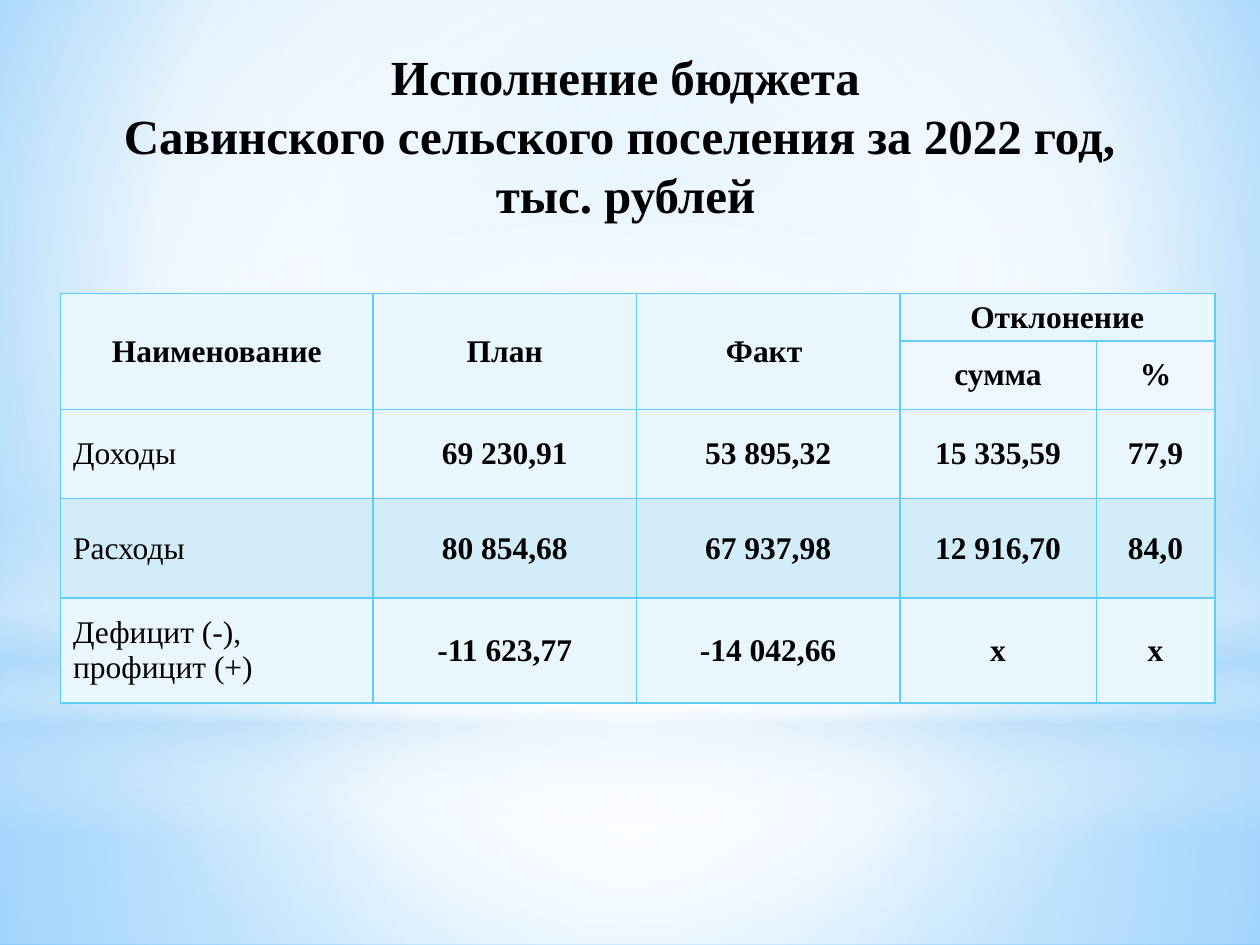
"""Build the budget execution slide with its soft blue backdrop and summary table."""
from lxml.etree import SubElement
from pptx import Presentation
from pptx.dml.color import RGBColor
from pptx.enum.shapes import MSO_SHAPE
from pptx.enum.text import MSO_ANCHOR, MSO_AUTO_SIZE, PP_ALIGN
from pptx.oxml.ns import qn
from pptx.util import Pt

COLORS = {
    "text": "000000", "white": "FFFFFF", "haze": "B4DCFA",
    "sky": "9ED5FF", "edge": "5BB9FF", "border": "5ECCF3",
    "light": "EAF6FD", "subheader": "EDF7FD", "band": "D2ECFA",
}
FONT = "Times New Roman"


def set_gradient(fill, properties, stops, focus):
    """Fill with (position, colour, opacity) stops, radial around focus or vertical."""
    fill.gradient()
    gradient = properties.find(qn("a:gradFill"))
    for child in list(gradient):
        gradient.remove(child)
    stop_list = SubElement(gradient, qn("a:gsLst"))
    for position, color, opacity in stops:
        stop = SubElement(stop_list, qn("a:gs"), pos=str(position * 1000))
        rgb = SubElement(stop, qn("a:srgbClr"), val=COLORS[color])
        if opacity < 100:
            SubElement(rgb, qn("a:alpha"), val=str(opacity * 1000))
    if focus:
        circle = SubElement(gradient, qn("a:path"), path="circle")
        inset = {side: str(share * 1000) for side, share in zip("ltrb", focus)}
        SubElement(circle, qn("a:fillToRect"), **inset)
    else:
        SubElement(gradient, qn("a:lin"), ang="5400000", scaled="0")


def style_text(frame, size, bold, align):
    """Apply the slide font to every paragraph of a text frame."""
    for paragraph in frame.paragraphs:
        paragraph.alignment = align
        for run in paragraph.runs:
            run.font.name = FONT
            run.font.size = Pt(size)
            run.font.bold = bold
            run.font.color.rgb = RGBColor.from_string(COLORS["text"])


prs = Presentation()
prs.slide_width, prs.slide_height = Pt(720), Pt(540)
slide = prs.slides.add_slide(prs.slide_layouts[5])

backdrop = slide.background.fill
set_gradient(
    backdrop, slide.element.find(".//" + qn("p:bgPr")),
    [(0, "sky", 100), (60, "white", 100), (100, "edge", 100)], (20, 10, 20, 60),
)

center = (50, 50, 50, 50)
glows = [
    (MSO_SHAPE.RECTANGLE, 402, 138, center,
     [(0, "white", 91), (37, "white", 76), (100, "haze", 79)]),
    (MSO_SHAPE.RECTANGLE, 0, 402, center,
     [(0, "white", 89), (48, "white", 62), (100, "haze", 79)]),
    (MSO_SHAPE.RECTANGLE, 297, 180, None,
     [(0, "white", 0), (29, "white", 30), (45, "haze", 40),
      (55, "white", 26), (65, "haze", 60), (100, "white", 0)]),
    (MSO_SHAPE.OVAL, 126, 402, center, [(0, "white", 100), (56, "white", 0)]),
]
for outline, top, height, focus, stops in glows:
    glow = slide.shapes.add_shape(outline, 0, Pt(top), prs.slide_width, Pt(height))
    glow.shadow.inherit = False
    glow.line.fill.background()
    set_gradient(glow.fill, glow.element.spPr, stops, focus)

rows = [
    ("Наименование", "План", "Факт ", "Отклонение", ""),
    ("", "", "", "сумма", "%"),
    ("Доходы", "69 230,91", "53 895,32", "15 335,59", "77,9"),
    ("Расходы", "80 854,68", "67 937,98", "12 916,70", "84,0"),
    ("Дефицит (-), профицит (+)", "-11 623,77", "-14 042,66", "х", "х"),
]
row_heights = [21.6, 38.9, 51.1, 56.9, 59.8]
row_fills = ["light", "subheader", "light", "band", "light"]
column_widths = [178.6, 150.5, 150.5, 112.3, 67.7]
budget = slide.shapes.add_table(
    len(rows), len(column_widths), Pt(34.6), Pt(167.8),
    Pt(sum(column_widths)), Pt(sum(row_heights)),
).table
for column, width in zip(budget.columns, column_widths):
    column.width = Pt(width)
for row, height in zip(budget.rows, row_heights):
    row.height = Pt(height)

for r, values in enumerate(rows):
    for c, value in enumerate(values):
        cell = budget.cell(r, c)
        cell.text_frame.text = value
        cell.vertical_anchor = MSO_ANCHOR.MIDDLE
        row_label = c == 0 and r > 1
        style_text(cell.text_frame, 18, not row_label,
                   PP_ALIGN.LEFT if row_label else PP_ALIGN.CENTER)
        cell_properties = cell._tc.get_or_add_tcPr()
        for side in ("lnL", "lnR", "lnT", "lnB"):
            border = SubElement(cell_properties, qn("a:" + side), w=str(Pt(1)))
            solid = SubElement(border, qn("a:solidFill"))
            SubElement(solid, qn("a:srgbClr"), val=COLORS["border"])
        cell.fill.solid()
        cell.fill.fore_color.rgb = RGBColor.from_string(COLORS[row_fills[r]])

for c in range(3):
    budget.cell(0, c).merge(budget.cell(1, c))
budget.cell(0, 3).merge(budget.cell(0, 4))

title = slide.shapes.title
title.left, title.top, title.width, title.height = Pt(8.6), Pt(23.8), Pt(697.7), Pt(106.6)
title.text_frame.text = (
    " Исполнение бюджета \vСавинского сельского поселения за 2022 год, \nтыс. рублей"
)
title.text_frame.auto_size = MSO_AUTO_SIZE.NONE
title.text_frame.vertical_anchor = MSO_ANCHOR.MIDDLE
style_text(title.text_frame, 28, True, PP_ALIGN.CENTER)
slide.shapes.element.append(title.element)

prs.save("out.pptx")
